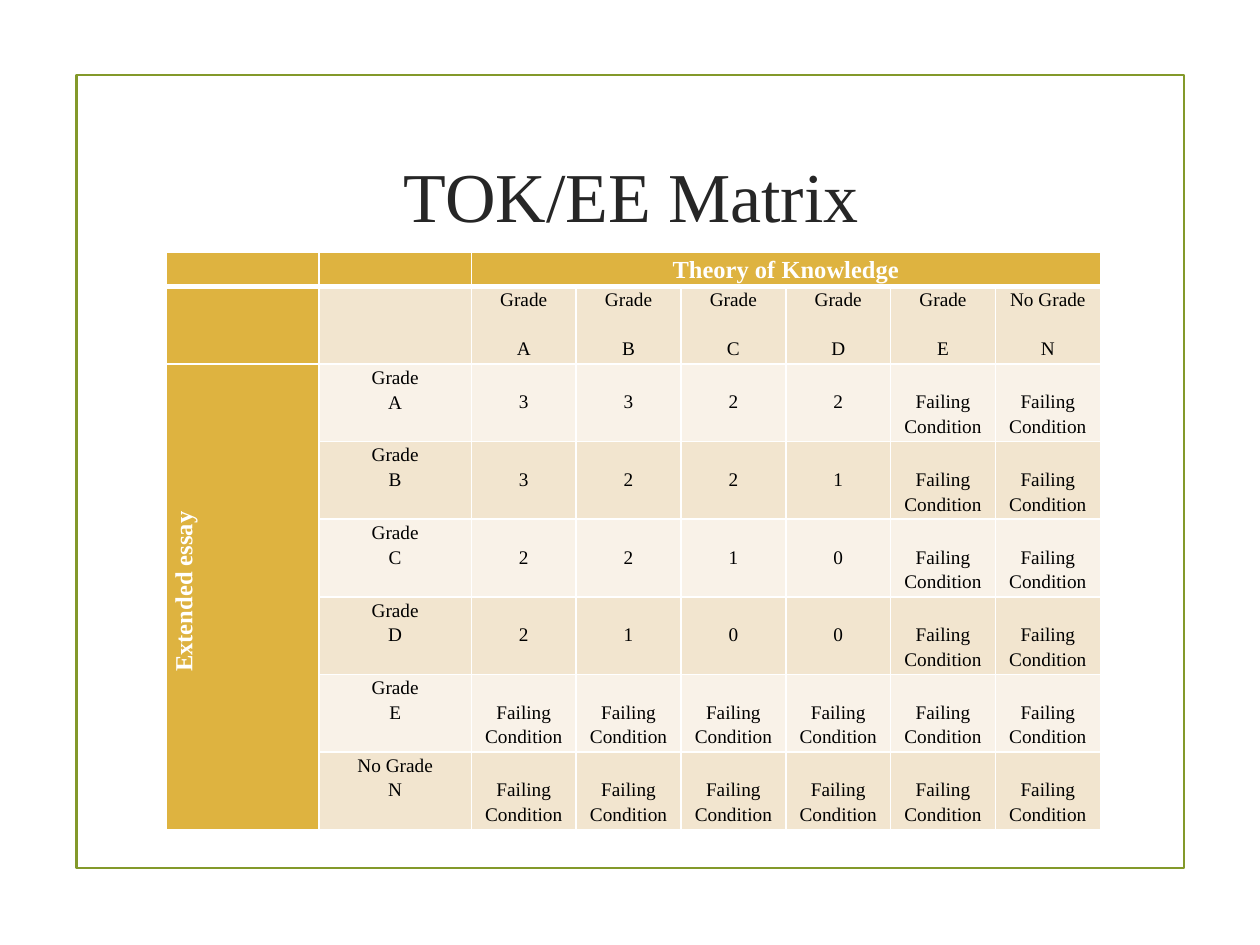
import pptx
import pptx.util
import pptx.dml.color
import pptx.enum.shapes
import pptx.enum.text
import pptx.oxml
import pptx.oxml.ns

Pt = pptx.util.Pt
CENTER = pptx.enum.text.PP_ALIGN.CENTER

TITLE = "TOK/EE Matrix"
ACROSS = "Theory of Knowledge"
DOWN = "Extended essay"
GRADES = [("Grade", letter) for letter in "ABCDE"] + [("No Grade", "N")]
FAIL = "Failing\nCondition"
POINTS = [
    ["3", "3", "2", "2"],
    ["3", "2", "2", "1"],
    ["2", "2", "1", "0"],
    ["2", "1", "0", "0"],
    [],
    [],
]

THEME = {
    "font": "Times New Roman",
    "title": "262626",
    "frame": "83992A",
    "gold": "DEB340",
    "sand": "F2E5CF",
    "cream": "F9F2E8",
    "white": "FFFFFF",
    "black": "000000",
    "title_size": 40,
    "head_size": 14,
    "body_size": 11,
    "spacing": 1.15,
}
FRAME = (43.7, 42.7, 632.9, 453.6)
TITLE_BOX = (92.9, 72, 535.7, 77.8)
TABLE_LEFT, TABLE_TOP = 95.2, 144.3
COLUMNS = [87.1] * 2 + [59.9] * len(GRADES)
ROWS = [16.6] + [39.6] * (len(GRADES) + 1)
LINE = 14
INSET = 4.5


def color(name):
    return pptx.dml.color.RGBColor.from_string(THEME[name])


def style(para, size, ink, bold=False):
    para.alignment = CENTER
    for span in para.runs:
        span.font.name = THEME["font"]
        span.font.size = Pt(size)
        span.font.bold = bold
        span.font.color.rgb = color(ink)


def add_borders(cell, row):
    properties = cell._tc.get_or_add_tcPr()
    for side in "LRTB":
        heavy = (row, side) in ((0, "B"), (1, "T"))
        properties.append(pptx.oxml.parse_xml(
            f'<a:ln{side} {pptx.oxml.ns.nsdecls("a")} w="{Pt(3 if heavy else 1)}">'
            f'<a:solidFill><a:srgbClr val="{THEME["white"]}"/></a:solidFill></a:ln{side}>'
        ))


def prepare(cell, row, fill):
    add_borders(cell, row)
    cell.fill.solid()
    cell.fill.fore_color.rgb = color(fill)
    cell.margin_left = cell.margin_right = Pt(INSET)
    cell.margin_top = cell.margin_bottom = 0


def shrink_empty(cell):
    cell.text_frame.paragraphs[0]._p.append(pptx.oxml.parse_xml(
        f'<a:endParaRPr {pptx.oxml.ns.nsdecls("a")} sz="{THEME["body_size"] * 100}"/>'
    ))


def write(cell, text, size=THEME["body_size"], ink="black", bold=False):
    cell.text_frame.text = text
    for para in cell.text_frame.paragraphs:
        para.line_spacing = THEME["spacing"]
        style(para, size, ink, bold)


def fill_for(row, column):
    if row == 0 or column == 0:
        return "gold"
    return "sand" if row % 2 else "cream"


def add_matrix(page):
    holder = page.shapes.add_table(
        len(ROWS), len(COLUMNS), Pt(TABLE_LEFT), Pt(TABLE_TOP),
        Pt(sum(COLUMNS)), Pt(sum(ROWS)))
    table = holder.table
    table.horz_banding = False
    for column, width in zip(table.columns, COLUMNS):
        column.width = Pt(width)
    for row, height in zip(table.rows, ROWS):
        row.height = Pt(height)
    for row in range(len(ROWS)):
        for column in range(len(COLUMNS)):
            prepare(table.cell(row, column), row, fill_for(row, column))

    last_row, last_column = len(ROWS) - 1, len(COLUMNS) - 1
    table.cell(0, 2).merge(table.cell(0, last_column))
    table.cell(2, 0).merge(table.cell(last_row, 0))
    write(table.cell(0, 2), ACROSS, THEME["head_size"], "white", True)
    side = table.cell(2, 0)
    write(side, DOWN, THEME["head_size"], "white", True)
    side._tc.get_or_add_tcPr().set("vert", "vert270")
    side.text_frame.paragraphs[0]._p.get_or_add_pPr().set("marL", str(Pt(5.8)))

    for index, grade in enumerate(GRADES):
        label = "\n".join(grade)
        top = table.cell(1, index + 2)
        write(top, label)
        top.text_frame.paragraphs[1].space_before = Pt(LINE)
        write(table.cell(index + 2, 1), label)
        results = POINTS[index] + [FAIL] * (len(GRADES) - len(POINTS[index]))
        for column, result in enumerate(results, 2):
            cell = table.cell(index + 2, column)
            write(cell, result)
            cell.margin_top = Pt(LINE)

    for cell in table.iter_cells():
        if not cell.text_frame.text:
            shrink_empty(cell)


def main():
    deck = pptx.Presentation()
    deck.slide_width, deck.slide_height = Pt(720), Pt(540)
    page = deck.slides.add_slide(deck.slide_layouts[6])

    frame = page.shapes.add_shape(
        pptx.enum.shapes.MSO_SHAPE.RECTANGLE, *map(Pt, FRAME))
    frame.shadow.inherit = False
    frame.fill.background()
    frame.line.color.rgb = color("frame")
    frame.line.width = Pt(1.25)

    box = page.shapes.add_textbox(*map(Pt, TITLE_BOX))
    box.text_frame.word_wrap = True
    box.text_frame.vertical_anchor = pptx.enum.text.MSO_ANCHOR.MIDDLE
    box.text_frame.text = TITLE
    style(box.text_frame.paragraphs[0], THEME["title_size"], "title")

    add_matrix(page)
    deck.save("out.pptx")


if __name__ == "__main__":
    main()
